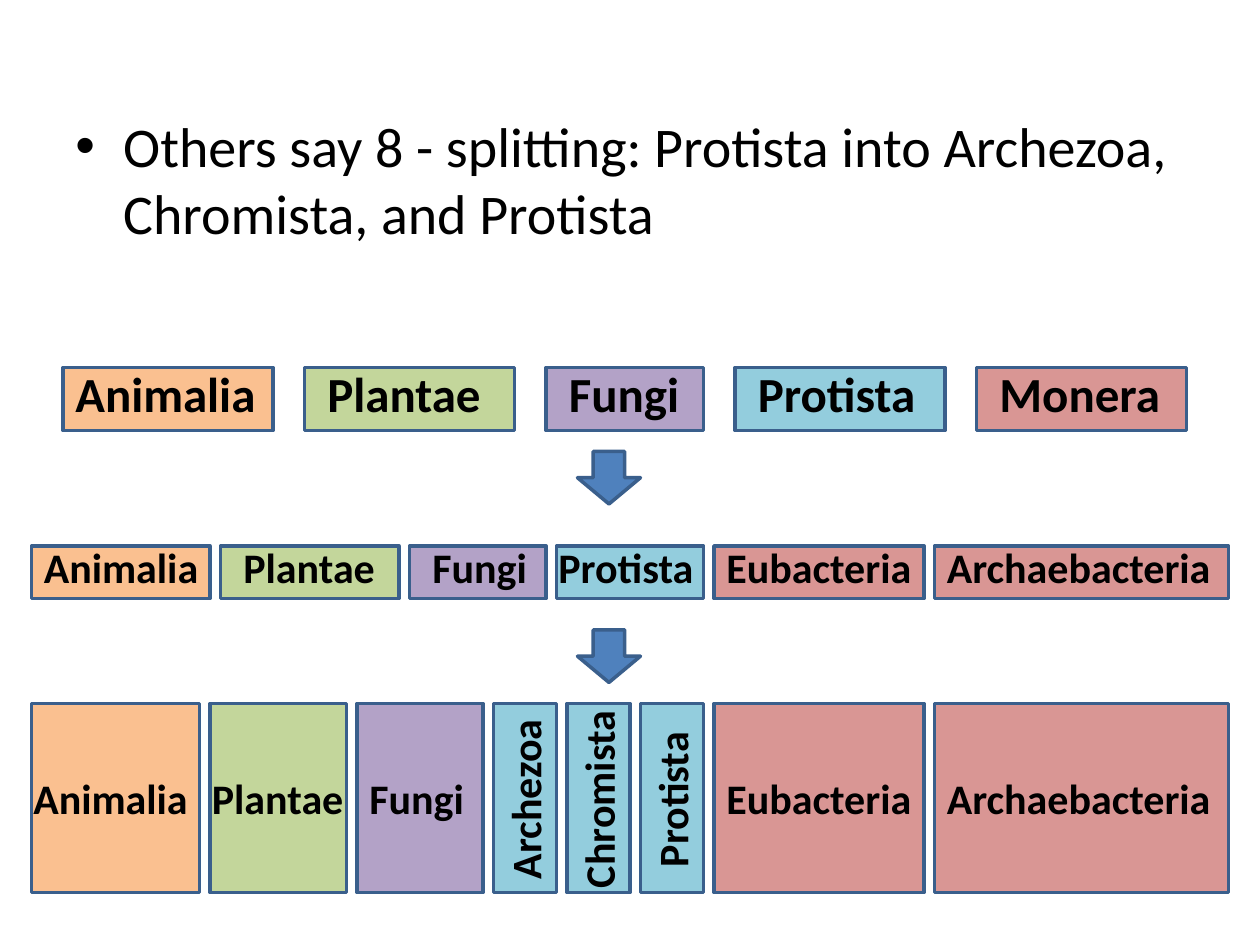
from lxml import etree
from pptx import Presentation
from pptx import util as u
from pptx.dml.color import RGBColor
from pptx.enum import shapes, text
from pptx.oxml.ns import qn

BULLET = "Others say 8 - splitting: Protista into Archezoa, Chromista, and Protista"
FONT, BLACK, OUTLINE, ARROW = "Calibri", "000000", "3A5F8C", "4F81BD"
ORANGE, GREEN, PURPLE, BLUE, RED = "FAC090", "C3D69B", "B3A2C7", "93CDDD", "D99694"

KINGDOMS = {
    "Animalia": (ORANGE, 1.44), "Plantae": (GREEN, 1.26), "Fungi": (PURPLE, 0.96),
    "Protista": (BLUE, 1.29), "Archezoa": (BLUE, 1.48), "Chromista": (BLUE, 1.62),
    "Monera": (RED, 1.31), "Eubacteria": (RED, 1.69), "Archaebacteria": (RED, 2.32),
}

# Each box: name, columns wide, label shift in columns (None means turned upright)
ROWS = [
    dict(left=6, gap=3, top=35, height=6, label_top=34, size=28, boxes=[
        ("Animalia", 20, 0), ("Plantae", 20, 1), ("Fungi", 15, 1),
        ("Protista", 20, 1), ("Monera", 20, 1)]),
    dict(left=3, gap=1, top=52, height=5, label_top=51, size=24, boxes=[
        ("Animalia", 17, 0), ("Plantae", 17, 1), ("Fungi", 13, 1),
        ("Protista", 14, -1), ("Eubacteria", 20, 0), ("Archaebacteria", 28, 0)]),
    dict(left=3, gap=1, top=67, height=18, label_top=73, size=24, boxes=[
        ("Animalia", 16, -1), ("Plantae", 13, -1), ("Fungi", 12, 0),
        ("Archezoa", 6, None), ("Chromista", 6, None), ("Protista", 6, None),
        ("Eubacteria", 20, 0), ("Archaebacteria", 28, 0)]),
]
ARROW_TOPS = (43, 60)
COLUMNS, INSET = 120, 0.2

deck = Presentation()
deck.slide_width, deck.slide_height = u.Inches(10), u.Inches(7.5)
page = deck.slides.add_slide(deck.slide_layouts[6])
CELL = deck.slide_width / COLUMNS


def colour(value):
    return RGBColor.from_string(value)


def add_block(parent, kind, left, top, width, height, fill):
    block = parent.add_shape(kind, *(int(n * CELL) for n in (left, top, width, height)))
    block.shadow.inherit = False
    block.fill.solid()
    block.fill.fore_color.rgb = colour(fill)
    block.line.color.rgb = colour(OUTLINE)
    block.line.width = u.Pt(2)


def add_text(parent, words, left, top, width, height, size, bold, wrap):
    box = parent.add_textbox(*(int(n) for n in (left, top, width, height)))
    box.text_frame.word_wrap = wrap
    para = box.text_frame.paragraphs[0]
    span = para.add_run()
    span.text = words
    span.font.name, span.font.size, span.font.bold = FONT, u.Pt(size), bold
    span.font.color.rgb = colour(BLACK)
    return box


def add_row(left, gap, top, height, label_top, size, boxes):
    group = page.shapes.add_group_shape().shapes
    labels = []
    for name, width, shift in boxes:
        fill, label_width = KINGDOMS[name]
        add_block(group, shapes.MSO_SHAPE.RECTANGLE, left, top, width, height, fill)
        label_width = u.Inches((label_width - INSET) * size / 24 + INSET)
        if shift is None:
            label_left = (left + width / 2) * CELL - label_width / 2
        else:
            label_left = (left + shift) * CELL
        labels.append((name, label_left, label_width, shift is None))
        left += width + gap
    for name, label_left, label_width, upright in labels:
        label = add_text(group, name, label_left, label_top * CELL, label_width,
                         u.Pt(size * 1.22 + 7.2), size, True, False)
        label.text_frame.auto_size = text.MSO_AUTO_SIZE.SHAPE_TO_FIT_TEXT
        if upright:
            label.rotation = 270


body = add_text(page.shapes, BULLET, 6 * CELL, 10 * CELL, 108 * CELL, 70 * CELL,
                32, False, True)
para = body.text_frame.paragraphs[0]
para.space_before = u.Pt(6.4)
props = para._p.get_or_add_pPr()
props.set("marL", str(u.Inches(0.38)))
props.set("indent", str(-u.Inches(0.38)))
etree.SubElement(props, qn("a:buFont")).set("typeface", "Arial")
etree.SubElement(props, qn("a:buChar")).set("char", "•")

for row in ROWS:
    add_row(**row)
for arrow_top in ARROW_TOPS:
    add_block(page.shapes, shapes.MSO_SHAPE.DOWN_ARROW, 55, arrow_top, 6, 5, ARROW)

deck.save("out.pptx")
